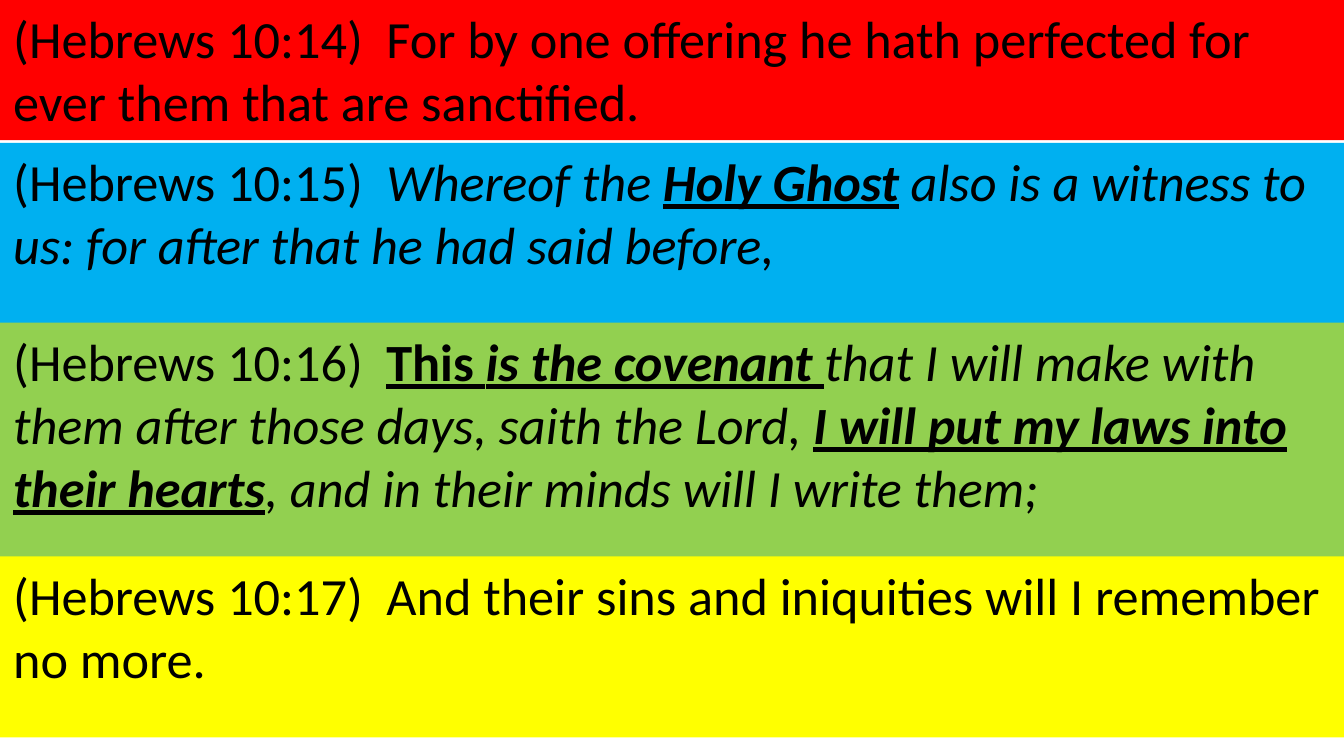
"""Build a slide of four coloured bands, each holding one verse of Hebrews 10."""
from typing import NamedTuple

from pptx import Presentation
from pptx.dml.color import RGBColor as RGB
from pptx.dml.fill import FillFormat
from pptx.enum.text import MSO_ANCHOR as Anchor, MSO_AUTO_SIZE as AutoSize
from pptx.util import Cm, Pt

WIDTH, HEIGHT = 25.4, 14.29


class Span(NamedTuple):
    text: str
    italic: bool = False
    strong: bool = False


class Verse(NamedTuple):
    number: int
    top: float
    height: float
    color: str
    spans: list[Span]


VERSES = [
    Verse(14, 0, 2.65, "FF0000", [
        Span("For by one offering he hath perfected for ever them that are sanctified."),
    ]),
    Verse(15, 2.7, 3.42, "00B0F0", [
        Span("Whereof the ", italic=True),
        Span("Holy Ghost", italic=True, strong=True),
        Span(" also is a witness to us: for after that he had said before,", italic=True),
    ]),
    Verse(16, 6.1, 4.62, "92D050", [
        Span("This ", strong=True),
        Span("is the covenant ", italic=True, strong=True),
        Span("that I will make with them after those days, saith the Lord, ", italic=True),
        Span("I will put my laws into their hearts", italic=True, strong=True),
        Span(", and in their minds will I write them;", italic=True),
    ]),
    Verse(17, 10.52, 3.42, "FFFF00", [
        Span("And their sins and iniquities will I remember no more."),
    ]),
]


def paint(fill: FillFormat, color: str) -> None:
    """Make a fill solid in the given hex colour."""
    fill.solid()
    fill.fore_color.rgb = RGB.from_string(color)


def add_span(p, span: Span) -> None:
    """Append one formatted run to a paragraph."""
    r = p.add_run()
    r.text = span.text
    r.font.name = "Calibri"
    r.font.size = Pt(28)
    r.font.italic = span.italic
    r.font.bold = r.font.underline = span.strong
    paint(r.font.fill, "000000")


def add_verse(s, verse: Verse) -> None:
    """Draw one full-width band with its reference and words."""
    sp = s.shapes.add_textbox(Cm(0), Cm(verse.top), Cm(WIDTH), Cm(verse.height))
    paint(sp.fill, verse.color)
    tf = sp.text_frame
    tf.word_wrap = True
    tf.auto_size = AutoSize.NONE
    tf.vertical_anchor = Anchor.TOP
    for span in [Span(f"(Hebrews 10:{verse.number})  "), *verse.spans]:
        add_span(tf.paragraphs[0], span)


def main() -> None:
    """Create the presentation and save it."""
    prs = Presentation()
    prs.slide_width, prs.slide_height = Cm(WIDTH), Cm(HEIGHT)
    s = prs.slides.add_slide(prs.slide_layouts[6])
    for verse in VERSES:
        add_verse(s, verse)
    prs.save("out.pptx")


if __name__ == "__main__":
    main()
